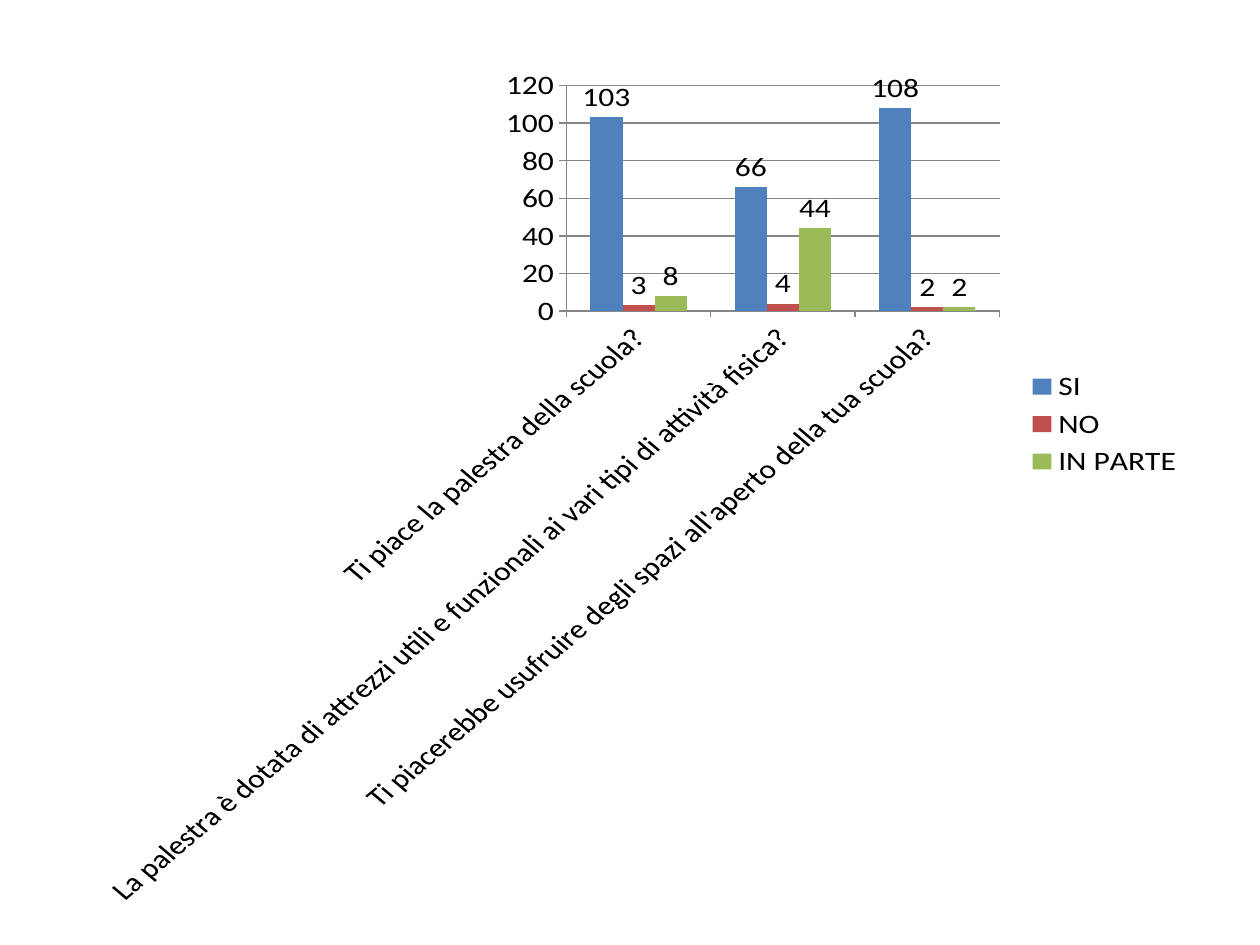
from pptx import Presentation
from pptx import util as u
from pptx.chart.data import CategoryChartData
from pptx.dml.color import RGBColor
from pptx.enum import chart as ch

BLACK = RGBColor(0x00, 0x00, 0x00)
GRAY = RGBColor(0x86, 0x86, 0x86)
BLUE = RGBColor(0x4F, 0x81, 0xBD)
RED = RGBColor(0xC0, 0x50, 0x4D)
GREEN = RGBColor(0x9B, 0xBB, 0x59)

QUESTIONS = [
    "Ti piace la palestra della scuola?",
    "La palestra è dotata di attrezzi utili e funzionali ai vari tipi di attività fisica?",
    "Ti piacerebbe usufruire degli spazi all'aperto della tua scuola?",
]
ANSWERS = [
    ("SI", (103, 66, 108), BLUE),
    ("NO", (3, 4, 2), RED),
    ("IN PARTE", (8, 44, 2), GREEN),
]


def style_axes(survey):
    """Give both axes thin gray lines and outside ticks."""
    for axis in (survey.category_axis, survey.value_axis):
        axis.major_tick_mark = ch.XL_TICK_MARK.OUTSIDE
        axis.minor_tick_mark = ch.XL_TICK_MARK.NONE
        axis.format.line.color.rgb = GRAY
        axis.format.line.width = u.Pt(0.75)
    gridlines = survey.value_axis.major_gridlines.format.line
    gridlines.color.rgb = GRAY
    gridlines.width = u.Pt(0.75)


def add_survey_chart(slide, left, top, width, height):
    """Place the clustered columns of survey answers in the given box."""
    answers = CategoryChartData()
    answers.categories = QUESTIONS
    for name, counts, _ in ANSWERS:
        answers.add_series(name, counts)
    survey = slide.shapes.add_chart(
        ch.XL_CHART_TYPE.COLUMN_CLUSTERED, left, top, width, height, answers
    ).chart

    survey.font.name = "Calibri"
    survey.font.size = u.Pt(18)
    survey.font.color.rgb = BLACK
    survey.has_title = False
    survey.has_legend = True
    survey.legend.position = ch.XL_LEGEND_POSITION.RIGHT
    survey.legend.include_in_layout = False
    style_axes(survey)

    columns = survey.plots[0]
    columns.gap_width = 150
    columns.overlap = 0
    columns.vary_by_categories = False
    for series, (_, _, color) in zip(columns.series, ANSWERS):
        series.format.fill.solid()
        series.format.fill.fore_color.rgb = color
        series.data_labels.show_value = True


def main():
    """Build the survey slide and save it."""
    deck = Presentation()
    deck.slide_width, deck.slide_height = u.Inches(10), u.Inches(7.5)
    slide = deck.slides.add_slide(deck.slide_layouts[6])
    add_survey_chart(slide, u.Inches(0.5), u.Inches(0.55), u.Inches(9), u.Inches(6.64))
    deck.save("out.pptx")


if __name__ == "__main__":
    main()
